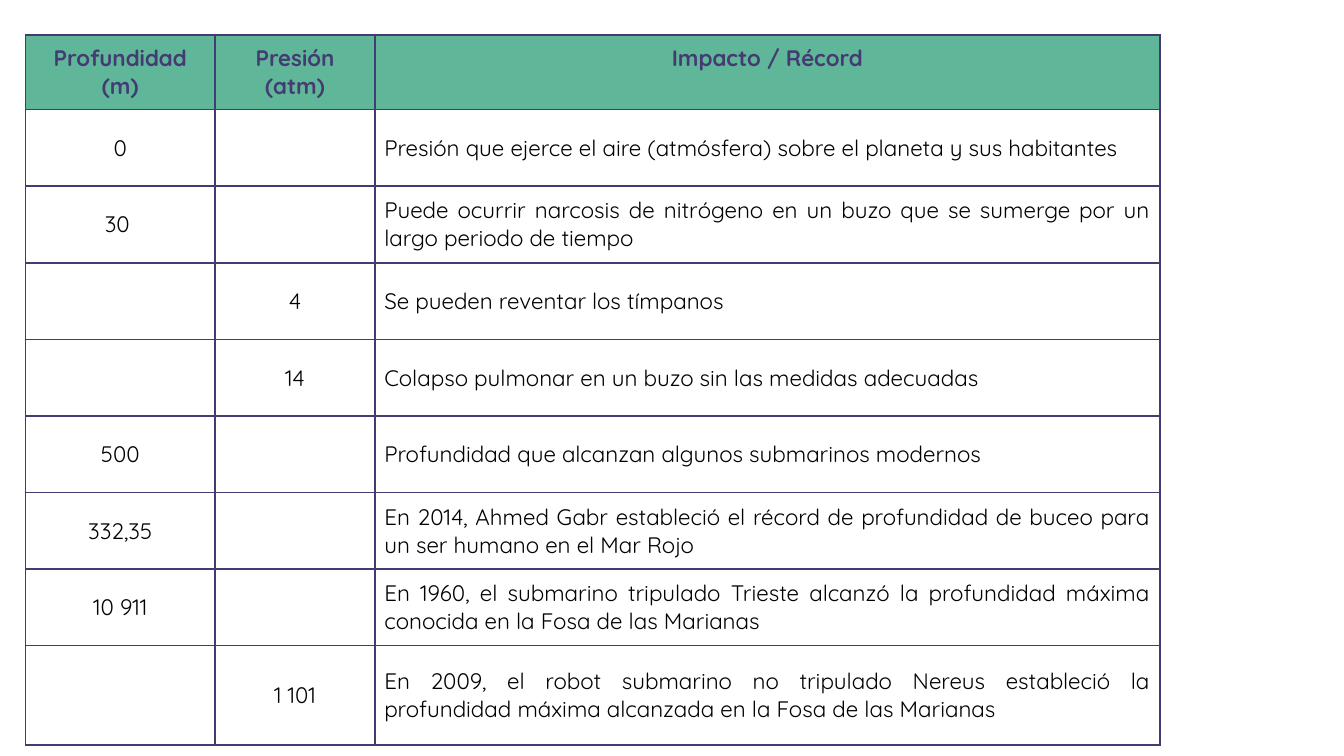
from lxml.etree import SubElement
from pptx import Presentation
from pptx.dml.color import RGBColor
from pptx.enum.text import MSO_ANCHOR, PP_ALIGN
from pptx.oxml.ns import qn
from pptx.util import Inches, Pt

PURPLE = "433B72"
GREEN = "60B698"
BLACK = "000000"


def color(value):
    return RGBColor.from_string(value)


def add_borders(cell):
    properties = cell._tc.get_or_add_tcPr()
    for side in ("lnL", "lnR", "lnT", "lnB"):
        line = SubElement(properties, qn(f"a:{side}"), w=str(Pt(1)))
        fill = SubElement(line, qn("a:solidFill"))
        SubElement(fill, qn("a:srgbClr"), val=PURPLE)


rows = [
    ("Profundidad (m)", "Presión (atm)", "Impacto / Récord"),
    ("0", "", "Presión que ejerce el aire (atmósfera) sobre el planeta y sus habitantes"),
    ("30 ", "", "Puede ocurrir narcosis de nitrógeno en un buzo que se sumerge por un largo periodo de tiempo"),
    ("", "4", "Se pueden reventar los tímpanos"),
    ("", "14", "Colapso pulmonar en un buzo sin las medidas adecuadas"),
    ("500", "", "Profundidad que alcanzan algunos submarinos modernos"),
    ("332,35", "", "En 2014, Ahmed Gabr estableció el récord de profundidad de buceo para un ser humano en el Mar Rojo"),
    ("10 911", "", "En 1960, el submarino tripulado Trieste alcanzó la profundidad máxima conocida en la Fosa de las Marianas"),
    ("", "1 101", "En 2009, el robot submarino no tripulado Nereus estableció la profundidad máxima alcanzada en la Fosa de las Marianas"),
]
column_widths = [1.41, 1.19, 5.84]
row_heights = [0.39] + [0.57] * 7 + [0.74]

# Widescreen 16:9 slide
presentation = Presentation()
presentation.slide_width = Inches(10)
presentation.slide_height = Inches(10 * 9 / 16)
slide = presentation.slides.add_slide(presentation.slide_layouts[6])

# Table grid
table = slide.shapes.add_table(
    len(rows), len(column_widths), Inches(0.19), Inches(0.26),
    Inches(sum(column_widths)), Inches(sum(row_heights)),
).table
table.first_row = False
table.horz_banding = False
for column, width in zip(table.columns, column_widths):
    column.width = Inches(width)
for row, height in zip(table.rows, row_heights):
    row.height = Inches(height)

# Cells: green header row, then plain rows with justified descriptions
for row_index, texts in enumerate(rows):
    is_header = row_index == 0
    for column_index, text in enumerate(texts):
        cell = table.cell(row_index, column_index)
        add_borders(cell)
        cell.margin_left = cell.margin_right = Inches(0.07)
        cell.margin_top = cell.margin_bottom = Inches(0.07)
        if is_header:
            cell.fill.solid()
            cell.fill.fore_color.rgb = color(GREEN)
            cell.vertical_anchor = MSO_ANCHOR.TOP
        else:
            cell.fill.background()
            cell.vertical_anchor = MSO_ANCHOR.MIDDLE

        paragraph = cell.text_frame.paragraphs[0]
        is_description = column_index == 2 and not is_header
        paragraph.alignment = PP_ALIGN.JUSTIFY if is_description else PP_ALIGN.CENTER
        if text:
            run = paragraph.add_run()
            run.text = text
            run.font.name = "Quicksand"
            run.font.size = Pt(12)
            run.font.bold = is_header
            run.font.color.rgb = color(PURPLE if is_header else BLACK)

presentation.save("out.pptx")
